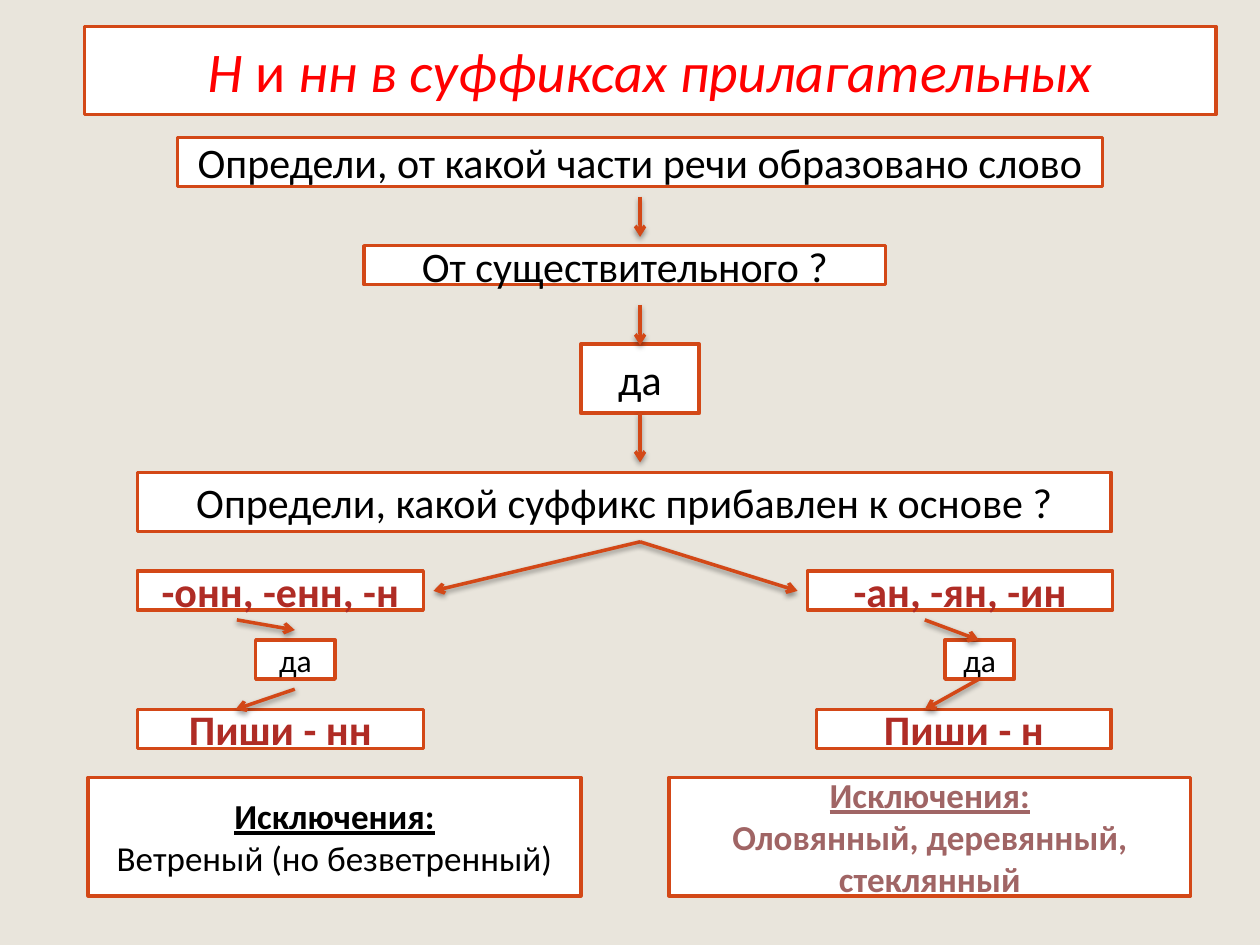
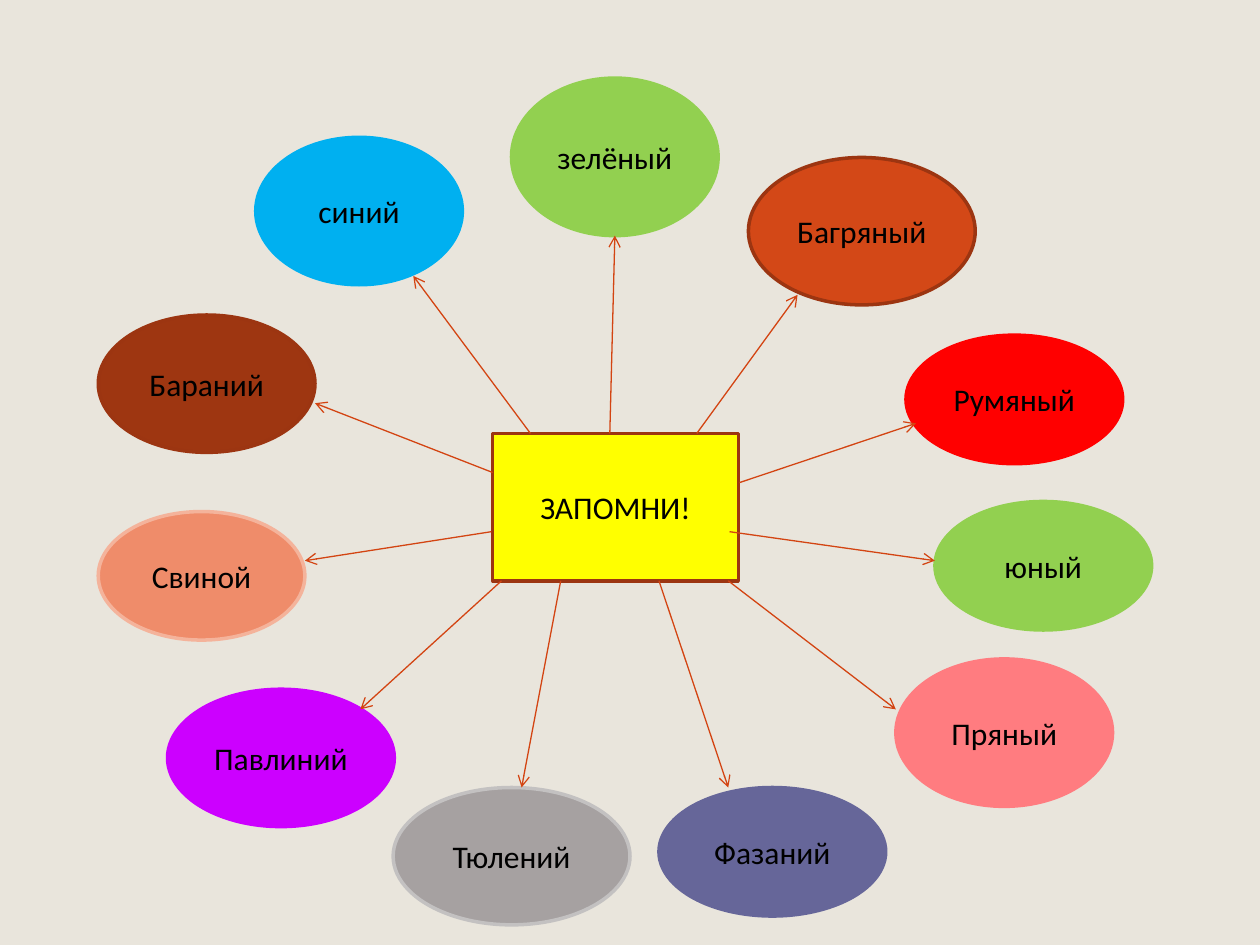
import pptx
import pptx.util
import pptx.dml.color
import pptx.enum.shapes
import pptx.enum.text
from lxml import etree
from pptx.oxml.ns import qn

Inches, Pt = pptx.util.Inches, pptx.util.Pt
SHAPE = pptx.enum.shapes.MSO_SHAPE
rgb = pptx.dml.color.RGBColor.from_string

BACKGROUND = "E9E5DC"
ORANGE = "D34817"
ARROW_ORANGE = "D34412"
BROWN = "9C3511"
WHITE = "FFFFFF"
BLACK = "000000"
RED = "FF0000"
DARK_RED = "AF2C25"
DUSTY_ROSE = "A06565"
GREEN = "92D050"
FONT = "Calibri"


def fill_shape(shape, text, size, fill, outline, color=BLACK, bold=False):
    """Give a shape its fill, outline and centred text."""
    shape.shadow.inherit = False
    shape.fill.solid()
    shape.fill.fore_color.rgb = rgb(fill)
    shape.line.color.rgb = rgb(outline)
    shape.line.width = Pt(2)
    frame = shape.text_frame
    frame.text = text
    frame.word_wrap = True
    frame.auto_size = pptx.enum.text.MSO_AUTO_SIZE.NONE
    frame.vertical_anchor = pptx.enum.text.MSO_ANCHOR.MIDDLE
    for paragraph in frame.paragraphs:
        paragraph.alignment = pptx.enum.text.PP_ALIGN.CENTER
        for run in paragraph.runs:
            run.font.name = FONT
            run.font.size = Pt(size)
            run.font.bold = bold
            run.font.color.rgb = rgb(color)


def draw_arrow(slide, ends, color, width, shadow=False):
    """Draw a straight arrow through ends = (x1, y1, x2, y2)."""
    arrow = slide.shapes.add_connector(
        pptx.enum.shapes.MSO_CONNECTOR.STRAIGHT, *map(Inches, ends))
    arrow.line.color.rgb = rgb(color)
    arrow.line.width = Pt(width)
    properties = arrow._element.spPr
    etree.SubElement(properties.find(qn("a:ln")), qn("a:tailEnd"), type="arrow")
    effects = etree.SubElement(properties, qn("a:effectLst"))
    if shadow:
        outer = etree.SubElement(
            effects, qn("a:outerShdw"), blurRad=str(Pt(3.1)), dist=str(Pt(1.6)),
            dir="5400000", rotWithShape="0")
        shade = etree.SubElement(outer, qn("a:srgbClr"), val=BLACK)
        etree.SubElement(shade, qn("a:alpha"), val="38000")


deck = pptx.Presentation()
deck.slide_width, deck.slide_height = Inches(10), Inches(7.5)
TITLE_ONLY, BLANK = deck.slide_layouts[5], deck.slide_layouts[6]
scheme_slide = deck.slides.add_slide(TITLE_ONLY)
words_slide = deck.slides.add_slide(BLANK)
for slide in deck.slides:
    slide.background.fill.solid()
    slide.background.fill.fore_color.rgb = rgb(BACKGROUND)

# Slide 1: title
title = scheme_slide.shapes.title
title.left, title.top = Inches(0.67), Inches(0.21)
title.width, title.height = Inches(8.98), Inches(0.7)
fill_shape(title, "Н", 32, WHITE, ORANGE, RED)
heading = title.text_frame.paragraphs[0]
for words in (" и ", "нн в суффиксах прилагательных"):
    heading.add_run().text = words
for run in heading.runs:
    run.font.name = FONT
    run.font.size = Pt(32)
    run.font.italic = run.text != " и "
    run.font.color.rgb = rgb(RED)

# Slide 1: steps as left, top, width, height, text, size, colour, bold
steps = [
    (1.41, 1.09, 7.34, 0.39, "Определи, от какой части речи образовано слово", 24, BLACK, False),
    (2.89, 1.95, 4.14, 0.31, "От существительного ?", 24, BLACK, False),
    (4.61, 2.73, 0.94, 0.55, "да", 24, BLACK, False),
    (1.09, 3.75, 7.73, 0.47, "Определи, какой суффикс прибавлен к основе ?", 24, BLACK, False),
    (1.09, 4.53, 2.27, 0.31, "-онн, -енн, -н", 24, DARK_RED, True),
    (6.41, 4.53, 2.42, 0.31, "-ан, -ян, -ин", 24, DARK_RED, True),
    (2.03, 5.08, 0.63, 0.31, "да", 18, BLACK, False),
    (7.5, 5.08, 0.55, 0.31, "да", 18, BLACK, False),
    (1.09, 5.63, 2.27, 0.31, "Пиши - нн", 24, DARK_RED, True),
    (6.48, 5.63, 2.34, 0.31, "Пиши - н", 24, DARK_RED, True),
]
for left, top, width, height, text, size, color, bold in steps:
    step = scheme_slide.shapes.add_shape(
        SHAPE.RECTANGLE, Inches(left), Inches(top), Inches(width), Inches(height))
    fill_shape(step, text, size, WHITE, ORANGE, color, bold)

# Slide 1: exceptions, each with an underlined heading
exceptions = [
    (0.7, 3.91, "Ветреный (но безветренный)", BLACK, False),
    (5.31, 4.14, "Оловянный, деревянный, стеклянный", DUSTY_ROSE, True),
]
for left, width, examples, color, bold in exceptions:
    exception = scheme_slide.shapes.add_shape(
        SHAPE.RECTANGLE, Inches(left), Inches(6.17), Inches(width), Inches(0.94))
    fill_shape(exception, "Исключения:\n" + examples, 20, WHITE, ORANGE, color, bold)
    caption = exception.text_frame.paragraphs[0].runs[0]
    caption.font.bold = caption.font.underline = True

# Slide 1: arrows down the middle, then along both branches
for ends in [
    (5.08, 1.56, 5.08, 1.88), (5.08, 2.42, 5.08, 2.74), (5.08, 3.28, 5.08, 3.67),
    (5.08, 4.3, 3.44, 4.69), (5.08, 4.3, 6.33, 4.69),
    (1.88, 4.92, 2.34, 5), (2.34, 5.47, 1.87, 5.63),
    (7.34, 4.92, 7.77, 5.08), (7.77, 5.39, 7.34, 5.63),
]:
    draw_arrow(scheme_slide, ends, ORANGE, 2, shadow=True)

# Slide 2: centre
reminder = words_slide.shapes.add_shape(
    SHAPE.RECTANGLE, Inches(3.91), Inches(3.44), Inches(1.95), Inches(1.17))
fill_shape(reminder, "ЗАПОМНИ!", 18, "FFFF00", BROWN)

# Slide 2: words clockwise from the top, each with its box, colours and arrow
adjectives = [
    ("зелёный", (4.06, 0.62, 1.64, 1.25), GREEN, GREEN, (4.84, 3.44, 4.88, 1.87)),
    ("Багряный", (5.94, 1.25, 1.8, 1.17), ORANGE, BROWN, (5.47, 3.52, 6.33, 2.34)),
    ("Румяный", (7.19, 2.66, 1.72, 1.02), RED, RED, (5.87, 3.83, 7.27, 3.36)),
    ("юный", (7.42, 3.98, 1.72, 1.02), GREEN, GREEN, (5.79, 4.22, 7.42, 4.45)),
    ("Пряный", (7.11, 5.23, 1.72, 1.17), "FF7C80", "FF7C80", (5.78, 4.61, 7.11, 5.63)),
    ("Фазаний", (5.23, 6.25, 1.8, 1.02), "666699", "666699", (5.23, 4.61, 5.78, 6.25)),
    ("Тюлений", (3.12, 6.25, 1.88, 1.09), "A6A1A1", "C3C1C1", (4.45, 4.61, 4.14, 6.25)),
    ("Павлиний", (1.33, 5.47, 1.8, 1.09), "CC00FF", "CC00FF", (3.98, 4.61, 2.86, 5.63)),
    ("Свиной", (0.78, 4.06, 1.64, 1.02), "EF8C6A", "F4B39B", (3.9, 4.22, 2.42, 4.45)),
    ("Бараний", (0.78, 2.5, 1.72, 1.09), "9E3611", BROWN, (3.91, 3.75, 2.5, 3.2)),
    ("синий", (2.03, 1.09, 1.64, 1.17), "00B0F0", "00B0F0", (4.21, 3.44, 3.28, 2.19)),
]
for word, box, fill, outline, ends in adjectives:
    adjective = words_slide.shapes.add_shape(SHAPE.OVAL, *map(Inches, box))
    fill_shape(adjective, word, 18, fill, outline)
    # The arrow to the crimson word starts inside the centre box, so it begins at the edge
    if word == "Багряный":
        ends = (5.53, 3.44) + ends[2:]
    draw_arrow(words_slide, ends, ARROW_ORANGE, 0.75)

deck.save("out.pptx")
